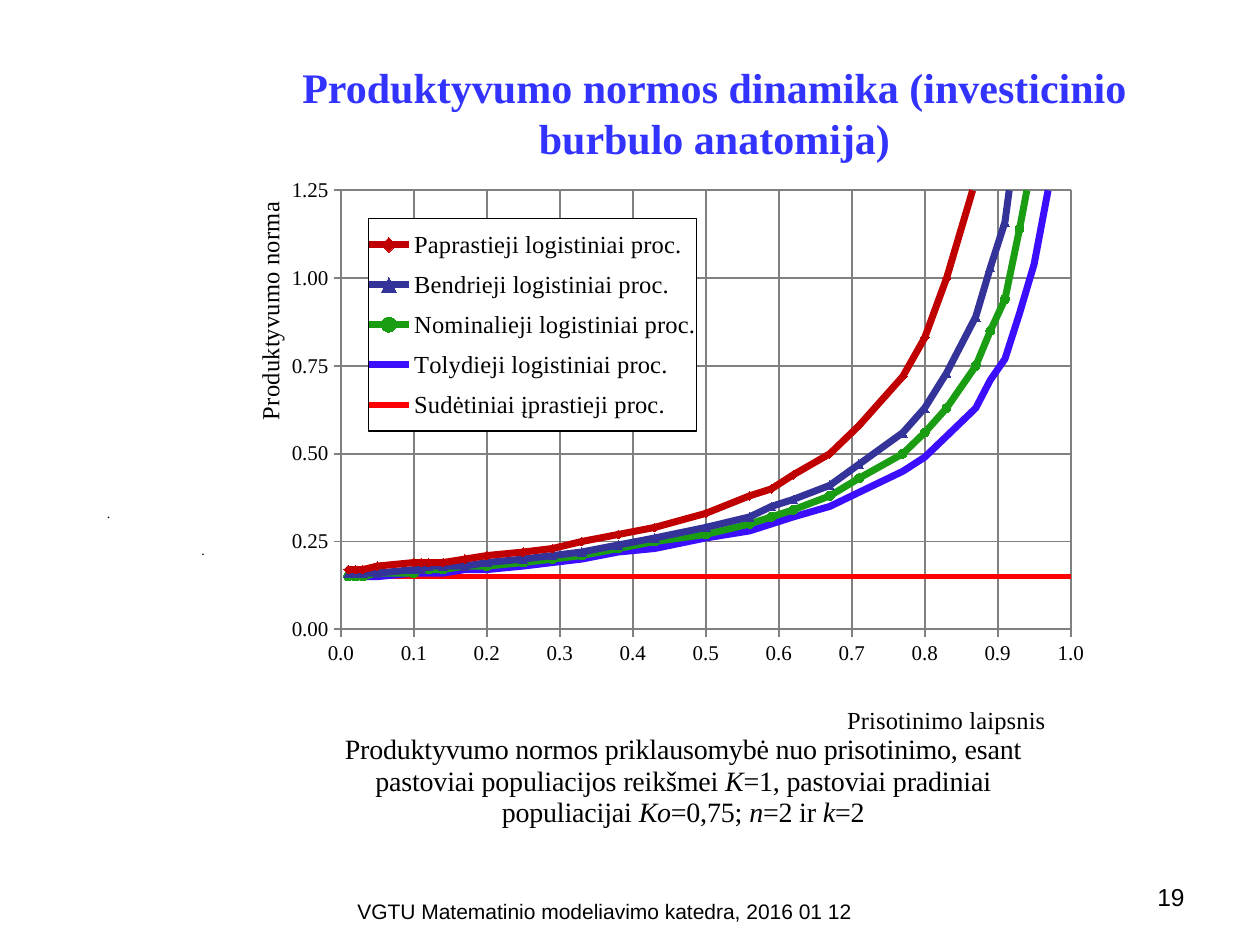
from dataclasses import dataclass

import pptx
import pptx.chart.data
import pptx.dml.color
import pptx.enum.chart
import pptx.enum.text
import pptx.oxml
import pptx.oxml.ns
import pptx.util

Inches = pptx.util.Inches
Pt = pptx.util.Pt
Align = pptx.enum.text.PP_ALIGN
Anchor = pptx.enum.text.MSO_ANCHOR
Marker = pptx.enum.chart.XL_MARKER_STYLE
qn = pptx.oxml.ns.qn


@dataclass(frozen=True)
class Theme:
    serif: str = "Times New Roman"
    sans: str = "Arial"
    text: str = "000000"
    title: str = "3333FF"
    grid: str = "808080"
    title_size: float = 24
    caption_size: float = 16
    label_size: float = 14
    small_size: float = 12
    dot_size: float = 8


THEME = Theme()

SATURATION = [0.01, 0.01, 0.02, 0.03, 0.05, 0.1, 0.11, 0.12, 0.14, 0.17, 0.2, 0.25,
              0.29, 0.33, 0.38, 0.43, 0.5, 0.56, 0.59, 0.62, 0.67, 0.71, 0.77, 0.8,
              0.83, 0.87, 0.89, 0.91, 0.93, 0.95, 0.97, 0.98, 0.99, 1, 1, 1]

# name, colour, line width, marker, values
SERIES = [
    ("Paprastieji logistiniai proc.", "C00000", 4, Marker.DIAMOND,
     [0.17, 0.17, 0.17, 0.17, 0.18, 0.19, 0.19, 0.19, 0.19, 0.2, 0.21, 0.22,
      0.23, 0.25, 0.27, 0.29, 0.33, 0.38, 0.4, 0.44, 0.5, 0.58, 0.72, 0.83,
      1, 1.28, 1.56, 1.83, 2.55, 3.5, 5.72, 8.5, 16.83, 166.83, 1666.83, 16666.83]),
    ("Bendrieji logistiniai proc.", "333399", 4, Marker.TRIANGLE,
     [0.16, 0.16, 0.16, 0.16, 0.16, 0.17, 0.17, 0.18, 0.18, 0.18, 0.19, 0.2,
      0.21, 0.22, 0.24, 0.26, 0.29, 0.32, 0.35, 0.37, 0.41, 0.47, 0.56, 0.63,
      0.73, 0.89, 1.03, 1.16, 1.47, 1.83, 2.53, 3.24, 4.89, 17.29, 56.75, 181.58]),
    ("Nominalieji logistiniai proc.", "1A9D13", 4, Marker.CIRCLE,
     [0.15, 0.15, 0.15, 0.15, 0.16, 0.16, 0.17, 0.17, 0.17, 0.18, 0.18, 0.19,
      0.2, 0.21, 0.23, 0.25, 0.27, 0.3, 0.32, 0.34, 0.38, 0.43, 0.5, 0.56,
      0.63, 0.75, 0.85, 0.94, 1.14, 1.36, 1.76, 2.12, 2.85, 6.55, 13.2, 25.02]),
    ("Tolydieji logistiniai proc.", "3C0EFE", 4, Marker.NONE,
     [0.15, 0.15, 0.15, 0.15, 0.15, 0.16, 0.16, 0.16, 0.16, 0.17, 0.17, 0.18,
      0.19, 0.2, 0.22, 0.23, 0.26, 0.28, 0.3, 0.32, 0.35, 0.39, 0.45, 0.49,
      0.55, 0.63, 0.71, 0.77, 0.9, 1.04, 1.26, 1.45, 1.77, 2.91, 4.06, 5.21]),
    ("Sudėtiniai įprastieji proc.", "FF0000", 3.25, Marker.NONE,
     [0.15] * len(SATURATION)),
]

# text, italic
CAPTION = [
    ("Produktyvumo normos priklausomybė nuo prisotinimo, esant pastoviai "
     "populiacijos reikšmei ", False),
    ("K", True), ("=1, pastoviai pradiniai populiacijai ", False),
    ("Ko", True), ("=0,75; ", False), ("n", True), ("=2 ir ", False),
    ("k", True), ("=2", False),
]


def rgb(color):
    return pptx.dml.color.RGBColor.from_string(color)


def set_font(font, size, name=THEME.serif, color=THEME.text, bold=False):
    font.size, font.name, font.bold = Pt(size), name, bold
    font.color.rgb = rgb(color)


def add_text(slide, box, text, size, align=Align.LEFT, anchor=Anchor.TOP, **font):
    tf = slide.shapes.add_textbox(*map(Inches, box)).text_frame
    tf.word_wrap = True
    tf.vertical_anchor = anchor
    p = tf.paragraphs[0]
    p.alignment = align
    p.add_run().text = text
    set_font(p.font, size, **font)


def place(element, x, y, w=None, h=None, target=""):
    """Give a chart part a manual layout in fractions of the chart."""
    values = [("layoutTarget", target), ("xMode", "edge"), ("yMode", "edge"),
              ("x", x), ("y", y), ("w", w), ("h", h)]
    inner = "".join(f'<c:{tag} val="{v}"/>' for tag, v in values if v not in (None, ""))
    layout = pptx.oxml.parse_xml(
        f'<c:layout {pptx.oxml.ns.nsdecls("c")}><c:manualLayout>{inner}'
        '</c:manualLayout></c:layout>')
    old, overlay = element.find(qn("c:layout")), element.find(qn("c:overlay"))
    if old is not None:
        element.replace(old, layout)
    elif overlay is not None:
        overlay.addprevious(layout)
    else:
        element.insert(0, layout)


def set_title(title, runs, size, x, y):
    p = title.text_frame.paragraphs[0]
    set_font(p.font, size)
    for text, italic in runs:
        r = p.add_run()
        r.text = text
        if italic:
            r.font.italic = True
    place(title._element, x, y)


def style_axis(axis, maximum, step, number_format, title, x, y):
    axis.minimum_scale, axis.maximum_scale, axis.major_unit = 0, maximum, step
    axis.major_tick_mark = pptx.enum.chart.XL_TICK_MARK.OUTSIDE
    axis.has_major_gridlines = True
    for line in (axis.format.line, axis.major_gridlines.format.line):
        line.color.rgb = rgb(THEME.grid)
        line.width = Pt(1)
    labels = axis.tick_labels
    labels.number_format, labels.number_format_is_linked = number_format, False
    set_font(labels.font, THEME.small_size)
    set_title(axis.axis_title, [(title, False)], THEME.label_size, x, y)


def style_legend(chart):
    chart.has_legend = True
    legend = chart.legend
    legend.position = pptx.enum.chart.XL_LEGEND_POSITION.RIGHT
    legend.include_in_layout = False
    set_font(legend.font, THEME.label_size)
    place(legend._element, 0.18, 0.09, 0.36, 0.3)
    legend._element.find(qn("c:overlay")).addnext(pptx.oxml.parse_xml(
        f'<c:spPr {pptx.oxml.ns.nsdecls("c", "a")}>'
        '<a:solidFill><a:srgbClr val="FFFFFF"/></a:solidFill><a:ln w="9525">'
        f'<a:solidFill><a:srgbClr val="{THEME.text}"/></a:solidFill></a:ln></c:spPr>'))


def style_series(series, color, width, marker):
    series.smooth = True
    series.format.line.color.rgb = rgb(color)
    series.format.line.width = Pt(width)
    series.marker.style = marker
    if marker != Marker.NONE:
        series.marker.size = 5
        series.marker.format.fill.solid()
        series.marker.format.fill.fore_color.rgb = rgb(color)
        series.marker.format.line.fill.background()


def add_productivity_chart(slide):
    data = pptx.chart.data.XyChartData()
    for name, *_, values in SERIES:
        s = data.add_series(name)
        for x, y in zip(SATURATION, values):
            s.add_data_point(x, y)
    chart = slide.shapes.add_chart(
        pptx.enum.chart.XL_CHART_TYPE.XY_SCATTER_SMOOTH,
        *map(Inches, (1.62, 1.23, 7.24, 5.62)), data).chart
    set_font(chart.font, 10)
    plot = chart.plots[0]
    plot.vary_by_categories = False
    for series, (_, color, width, marker, _) in zip(plot.series, SERIES):
        style_series(series, color, width, marker)
    style_axis(chart.category_axis, 1, 0.1, "0.0", "Prisotinimo laipsnis", 0.7, 0.77)
    style_axis(chart.value_axis, 1.25, 0.25, "0.00", "Produktyvumo norma", 0.05, 0.06)
    body = chart.value_axis.axis_title.text_frame._txBody.bodyPr
    body.set("rot", "-5400000")
    body.set("vert", "horz")
    style_legend(chart)
    set_title(chart.chart_title, CAPTION, THEME.caption_size, 0.15, 0.81)
    chart.chart_title._element.find(qn("c:overlay")).set("val", "1")
    place(chart._chartSpace.chart.plotArea, 0.15, 0.05, 0.8, 0.62, "inner")


def main():
    prs = pptx.Presentation()
    prs.slide_width, prs.slide_height = Inches(10), Inches(7.5)
    slide = prs.slides.add_slide(prs.slide_layouts[6])
    add_text(slide, (0.75, 1.47, 8.5, 5.2), ".", THEME.dot_size, anchor=Anchor.MIDDLE)
    add_text(slide, (1.5, 4.25, 7, 1.92), ".", THEME.dot_size)
    add_text(slide, (2.01, 0.44, 7.32, 0.91),
             "Produktyvumo normos dinamika (investicinio burbulo anatomija)",
             THEME.title_size, Align.CENTER, color=THEME.title, bold=True)
    add_productivity_chart(slide)
    add_text(slide, (7.17, 6.95, 2.33, 0.4), "19", THEME.label_size,
             Align.RIGHT, name=THEME.sans)
    add_text(slide, (1.57, 7.08, 6.46, 0.26),
             "VGTU Matematinio modeliavimo katedra, 2016 01 12",
             THEME.small_size, Align.CENTER, name=THEME.sans)
    prs.save("out.pptx")


if __name__ == "__main__":
    main()
